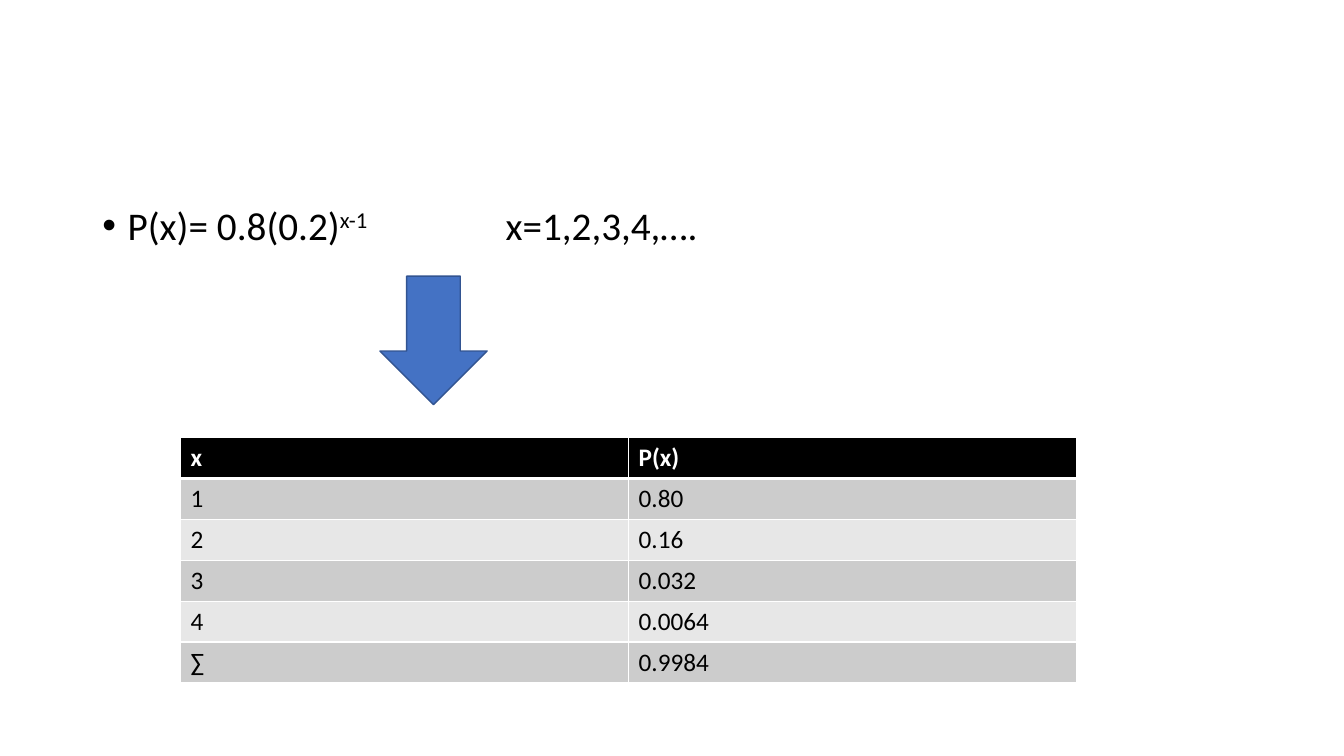
from lxml import etree
from pptx import Presentation
from pptx.dml.color import RGBColor
from pptx.enum.shapes import MSO_SHAPE
from pptx.enum.text import MSO_AUTO_SIZE
from pptx.oxml.ns import qn
from pptx.util import Pt

DOWN_ARROW = MSO_SHAPE.DOWN_ARROW
NO_AUTOFIT = MSO_AUTO_SIZE.NONE

BLACK = RGBColor(0x00, 0x00, 0x00)
WHITE = RGBColor(0xFF, 0xFF, 0xFF)
BLUE = RGBColor(0x44, 0x72, 0xC4)
DARK_BLUE = RGBColor(0x32, 0x54, 0x91)
DARK_BAND = RGBColor(0xCC, 0xCC, 0xCC)
LIGHT_BAND = RGBColor(0xE7, 0xE7, 0xE7)

FONT = "Calibri"
FORMULA_FORMAT = {"name": FONT, "size": Pt(28)}
CELL_FORMAT = {"name": FONT, "size": Pt(18)}
FORMULA_RUNS = [("P(x)= 0.8(0.2)", 0), ("x-1\t", 30000), ("x=1,2,3,4,….", 0)]
PROBABILITIES = [
    ("x", "P(x)"),
    ("1", "0.80"),
    ("2", "0.16"),
    ("3", "0.032"),
    ("4", "0.0064"),
    ("∑", "0.9984"),
]


def format_font(font, color, values):
    for name, value in values.items():
        setattr(font, name, value)
    font.color.rgb = color


def set_bullet(paragraph, indent, tab_position):
    properties = paragraph._p.get_or_add_pPr()
    properties.set("marL", str(indent))
    properties.set("indent", str(-indent))
    etree.SubElement(properties, qn("a:buFont"), typeface="Arial")
    etree.SubElement(properties, qn("a:buChar"), char="•")
    tabs = etree.SubElement(properties, qn("a:tabLst"))
    etree.SubElement(tabs, qn("a:tab"), pos=str(tab_position), algn="l")


def add_formula(body, left, top, width, height):
    body.left, body.top, body.width, body.height = left, top, width, height
    body.text_frame.auto_size = NO_AUTOFIT
    paragraph = body.text_frame.paragraphs[0]
    paragraph.line_spacing = 0.9
    paragraph.space_before = Pt(10)
    set_bullet(paragraph, Pt(18), Pt(288))
    for text, baseline in FORMULA_RUNS:
        run = paragraph.add_run()
        run.text = text
        format_font(run.font, BLACK, FORMULA_FORMAT)
        run._r.get_or_add_rPr().set("baseline", str(baseline))


def add_arrow(slide, left, top, width, height):
    arrow = slide.shapes.add_shape(DOWN_ARROW, left, top, width, height)
    arrow.shadow.inherit = False
    arrow.fill.solid()
    arrow.fill.fore_color.rgb = BLUE
    arrow.line.color.rgb = DARK_BLUE
    arrow.line.width = Pt(1)


def set_borders(cell, widths):
    properties = cell._tc.get_or_add_tcPr()
    for position, (side, width) in enumerate(widths.items()):
        line = etree.Element(qn(f"a:ln{side}"), w=str(width))
        fill = etree.SubElement(line, qn("a:solidFill"))
        etree.SubElement(fill, qn("a:srgbClr"), val=str(WHITE))
        properties.insert(position, line)


def add_probability_table(slide, left, top, width, height):
    row_count, column_count = len(PROBABILITIES), len(PROBABILITIES[0])
    table = slide.shapes.add_table(
        row_count, column_count, left, top, width, height
    ).table
    for row_index, values in enumerate(PROBABILITIES):
        is_header = row_index == 0
        band = DARK_BAND if row_index % 2 else LIGHT_BAND
        widths = {
            "L": Pt(1),
            "R": Pt(1),
            "T": Pt(3 if row_index == 1 else 1),
            "B": Pt(3 if is_header else 1),
        }
        for column_index, text in enumerate(values):
            cell = table.cell(row_index, column_index)
            cell.fill.solid()
            cell.fill.fore_color.rgb = BLACK if is_header else band
            set_borders(cell, widths)
            run = cell.text_frame.paragraphs[0].add_run()
            run.text = text
            color = WHITE if is_header else BLACK
            format_font(run.font, color, {**CELL_FORMAT, "bold": is_header})


def add_distribution_slide(presentation):
    slide = presentation.slides.add_slide(presentation.slide_layouts[1])
    title, body = slide.placeholders
    title.element.getparent().remove(title.element)
    add_formula(body, Pt(66), Pt(143.75), Pt(828), Pt(342.6))
    add_arrow(slide, Pt(271.4), Pt(197.2), Pt(76.6), Pt(91.8))
    add_probability_table(slide, Pt(129), Pt(312.6), Pt(640), Pt(175.2))


def main():
    presentation = Presentation()
    presentation.slide_width = Pt(960)
    presentation.slide_height = Pt(540)
    add_distribution_slide(presentation)
    presentation.save("out.pptx")


if __name__ == "__main__":
    main()
